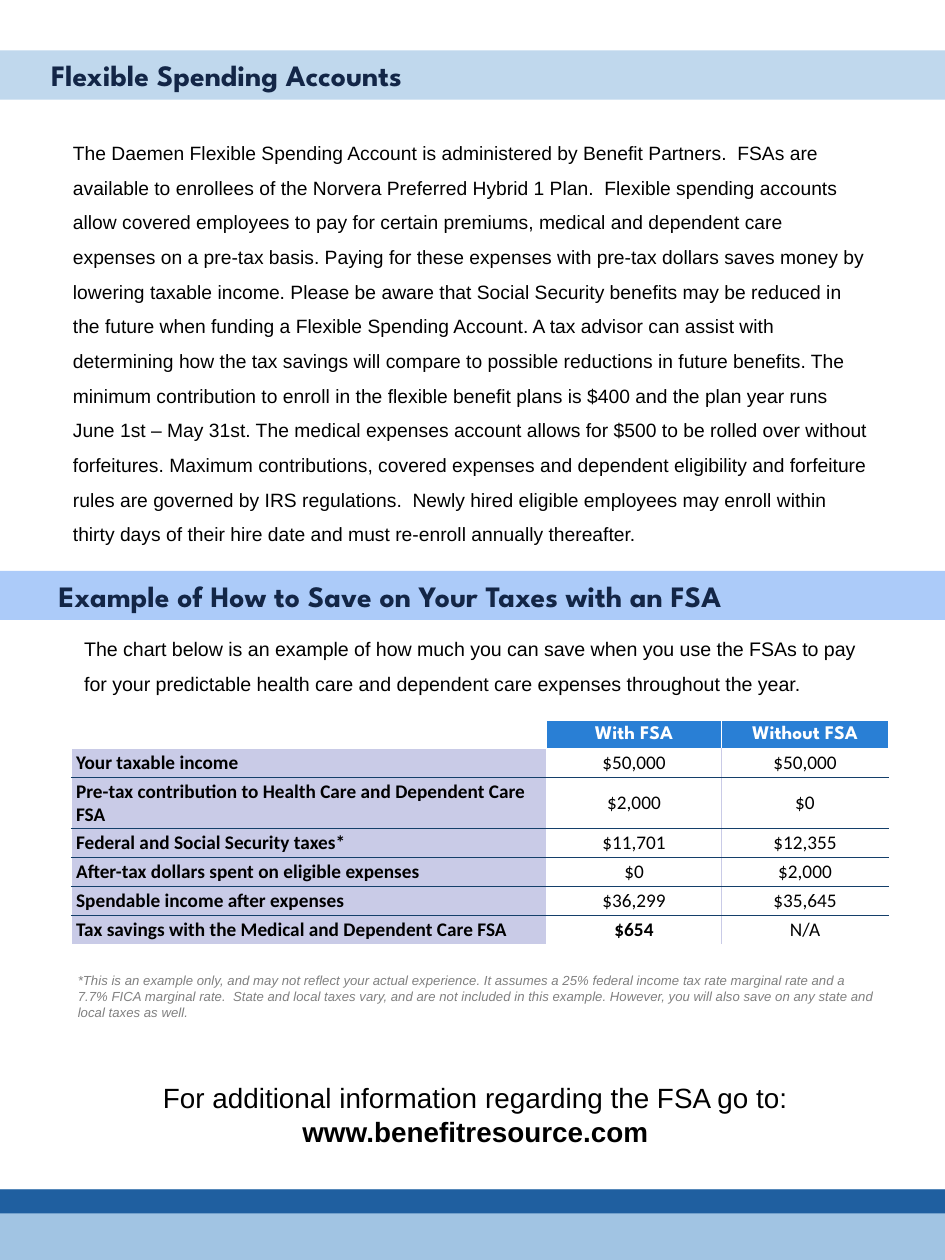
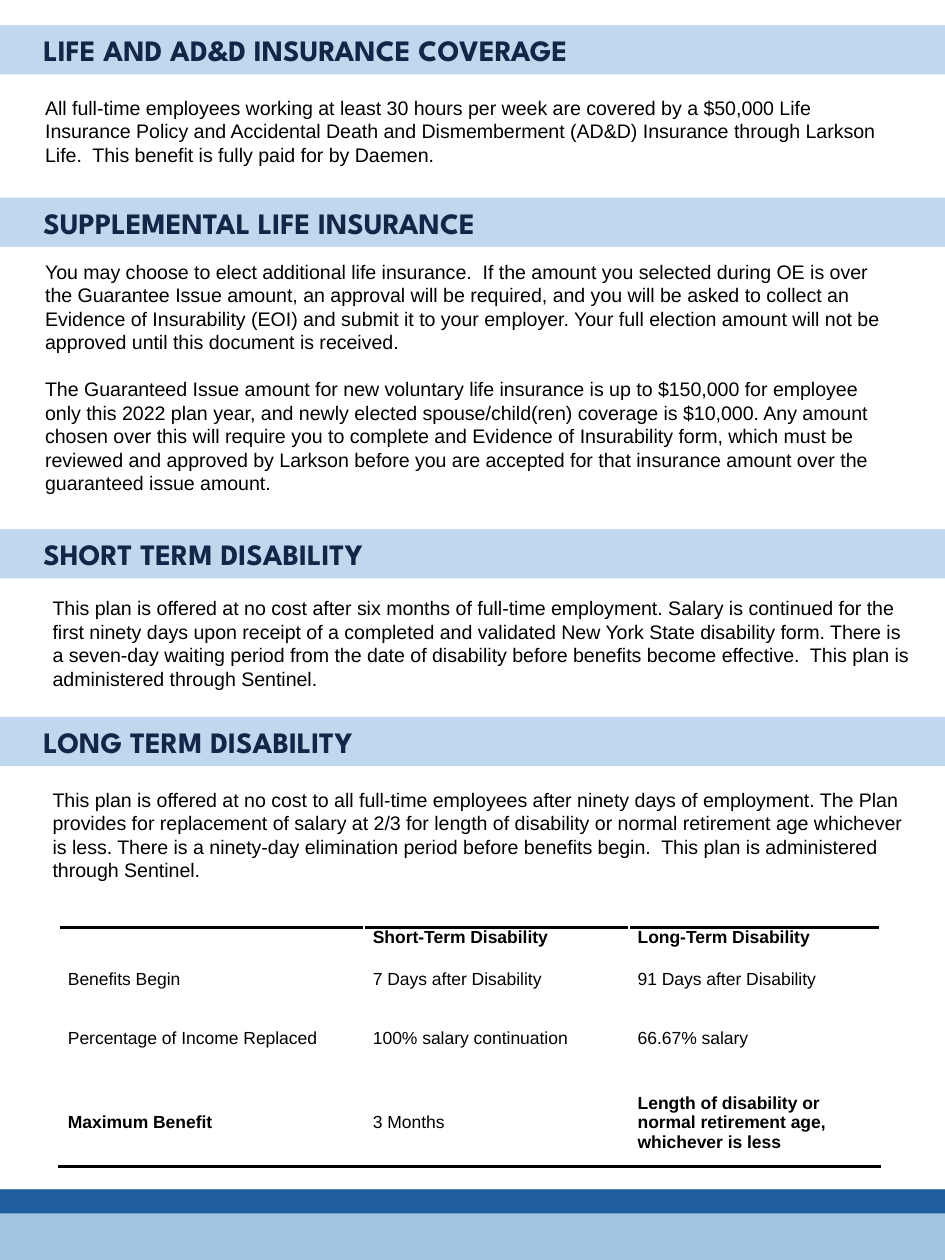
from lxml.etree import SubElement
from pptx import Presentation
from pptx.dml.color import RGBColor
from pptx.enum.shapes import MSO_SHAPE
from pptx.enum.text import MSO_ANCHOR, MSO_AUTO_SIZE, PP_ALIGN
from pptx.oxml.ns import qn
from pptx.util import Pt

PAGE_WIDTH, PAGE_HEIGHT = 540, 720
BAND_HEIGHT = 28.08
BODY_FONT, TITLE_FONT, LABEL_FONT = "Arial", "League Spartan", "Calibri"
BODY_SIZE = 11.2
COLORS = {
    "band": "C0D8ED", "example_band": "ACCBF9", "title": "132647",
    "footer": "A1C4E3", "footer_stripe": "1F5FA0",
    "text": "000000", "note": "808080", "white": "FFFFFF",
    "header": "297FD5", "label": "C9CBE7", "rule": "143F6A",
}


def color(name):
    return RGBColor.from_string(COLORS[name])


def style_paragraph(paragraph, font=BODY_FONT, size=BODY_SIZE, ink="text", bold=False,
                    italic=False, align=PP_ALIGN.LEFT):
    paragraph.alignment = align
    paragraph.font.name = font
    paragraph.font.size = Pt(size)
    paragraph.font.bold = bold
    paragraph.font.italic = italic
    paragraph.font.color.rgb = color(ink)


def add_rectangle(slide, left, top, width, height, fill):
    shape = slide.shapes.add_shape(MSO_SHAPE.RECTANGLE, Pt(left), Pt(top), Pt(width), Pt(height))
    shape.shadow.inherit = False
    shape.fill.solid()
    shape.fill.fore_color.rgb = color(fill)
    shape.line.fill.background()
    return shape


def add_footer(slide, top=679.68):
    add_rectangle(slide, 0, top, PAGE_WIDTH, PAGE_HEIGHT - top, "footer")
    add_rectangle(slide, 0, top, PAGE_WIDTH, 13.68, "footer_stripe")


def add_band(slide, top, title, indent=24.8, fill="band"):
    """Full-width title band."""
    shape = add_rectangle(slide, 0, top, PAGE_WIDTH, BAND_HEIGHT, fill)
    frame = shape.text_frame
    frame.margin_left = Pt(indent)
    frame.word_wrap = True
    frame.text = title
    style_paragraph(frame.paragraphs[0], TITLE_FONT, 16.9, "title", bold=True)


def add_text(slide, box, texts, line_spacing=None, gap=0, anchor=MSO_ANCHOR.TOP, **style):
    """Text box with one paragraph per text, gap points apart."""
    frame = slide.shapes.add_textbox(*map(Pt, box)).text_frame
    frame.word_wrap = True
    frame.auto_size = MSO_AUTO_SIZE.SHAPE_TO_FIT_TEXT
    frame.vertical_anchor = anchor
    for index, text in enumerate(texts):
        paragraph = frame.add_paragraph() if index else frame.paragraphs[0]
        paragraph.text = text
        style_paragraph(paragraph, **style)
        if line_spacing:
            paragraph.line_spacing = line_spacing
        if index:
            paragraph.space_before = Pt(gap)
    return frame


def add_table(slide, left, top, column_widths, row_heights):
    """Plain table without banding."""
    table = slide.shapes.add_table(
        len(row_heights), len(column_widths), Pt(left), Pt(top),
        Pt(sum(column_widths)), Pt(sum(row_heights))).table
    table.first_row = table.horz_banding = False
    for column, width in zip(table.columns, column_widths):
        column.width = Pt(width)
    for row, height in zip(table.rows, row_heights):
        row.height = Pt(height)
    return table


def fill_cell(cell, text, margins, borders, fill=None, anchor=MSO_ANCHOR.MIDDLE, **style):
    """Borders map a side (L, R, T, B) to a colour name and a width."""
    cell.margin_left = cell.margin_right = Pt(margins[0])
    cell.margin_top = cell.margin_bottom = Pt(margins[1])
    cell.vertical_anchor = anchor
    properties = cell._tc.get_or_add_tcPr()
    for side in "LRTB":
        if side in borders:
            ink, width = borders[side]
            line = SubElement(properties, qn(f"a:ln{side}"), w=str(Pt(width)))
            solid = SubElement(line, qn("a:solidFill"))
            SubElement(solid, qn("a:srgbClr"), val=COLORS[ink])
    if fill:
        cell.fill.solid()
        cell.fill.fore_color.rgb = color(fill)
    else:
        cell.fill.background()
    paragraph = cell.text_frame.paragraphs[0]
    if text:
        paragraph.text = text
    style_paragraph(paragraph, **style)
    if not text:
        SubElement(paragraph._p, qn("a:endParaRPr"), sz=str(int(style["size"] * 100)))
    return paragraph


def add_savings_table(slide, left, top):
    rows = [
        ("", "With FSA", "Without FSA"),
        ("Your taxable income", "$50,000", "$50,000"),
        ("Pre-tax contribution to Health Care and Dependent Care FSA", "$2,000", "$0"),
        ("Federal and Social Security taxes*", "$11,701", "$12,355"),
        ("After-tax dollars spent on eligible expenses", "$0", "$2,000"),
        ("Spendable income after expenses", "$36,299", "$35,645"),
        ("Tax savings with the Medical and Dependent Care FSA", "$654", "N/A"),
    ]
    heights = [15.8, 16.6, 29.2] + [16.6] * 4
    table = add_table(slide, left, top, [271.4, 99.9, 95.5], heights)
    last = len(rows) - 1
    white, rule, divider = ("white", 1), ("rule", 1), ("label", 1)
    for row, texts in enumerate(rows):
        for column, text in enumerate(texts):
            header, label = row == 0, column == 0
            if header:
                borders = {"L": white, "T": white, "R": white}
                fill = None if label else "header"
            else:
                borders = {"R": white} if label else {"L": white if column == 1 else divider}
                if column == 1:
                    borders["R"] = divider
                if row > 1:
                    borders["T"] = rule
                if row < last:
                    borders["B"] = rule
                fill = "label" if label else None
            fill_cell(
                table.cell(row, column), text, (2.5, 1.3), borders, fill, size=11,
                font=TITLE_FONT if header else LABEL_FONT,
                ink="white" if header else "text",
                bold=header or label or text == "$654",
                align=PP_ALIGN.LEFT if label else PP_ALIGN.CENTER)


def add_disability_table(slide, left, top):
    rows = [
        ("", "Short-Term Disability", "Long-Term Disability"),
        ("Benefits Begin", "7 Days after Disability", "91 Days after Disability"),
        ("Percentage of Income Replaced", "100% salary continuation", "66.67% salary"),
        ("Maximum Benefit", "3 Months",
         "Length of disability or normal retirement age, whichever is less"),
    ]
    table = add_table(slide, left, top, [174.3, 151.3, 143.5], [19.4, 20.9, 46.1, 50.4])
    last = len(rows) - 1
    edges = {0: {"T": ("text", 2)}, last: {"B": ("text", 2)}}
    for row, texts in enumerate(rows):
        for column, text in enumerate(texts):
            paragraph = fill_cell(
                table.cell(row, column), text, (5.04, 0), edges.get(row, {}), "white",
                MSO_ANCHOR.MIDDLE if row else MSO_ANCHOR.TOP, size=10,
                bold=row == 0 or (row == last and column != 1))
            if row == 0:
                paragraph.space_after = Pt(6)


def build_spending_accounts(slide):
    add_footer(slide)

    # Account description
    add_band(slide, 28.8, "Flexible Spending Accounts", 29.2)
    description = [
        "The Daemen Flexible Spending Account is administered by Benefit Partners.  FSAs are "
        "available to enrollees of the Norvera Preferred Hybrid 1 Plan.  Flexible spending "
        "accounts allow covered employees to pay for certain premiums, medical and dependent "
        "care expenses on a pre-tax basis. Paying for these expenses with pre-tax dollars saves "
        "money by lowering taxable income.",
        "Please be aware that Social Security benefits may be "
        "reduced in the future when funding a Flexible Spending Account. A tax advisor can "
        "assist with determining how the tax savings will compare to possible reductions in "
        "future benefits.",
        "The minimum contribution to enroll in the flexible benefit plans is "
        "$400 and the plan year runs June 1st – May 31st. The medical expenses account allows "
        "for $500 to be rolled over without forfeitures. Maximum contributions, covered "
        "expenses and dependent eligibility and forfeiture rules are governed by IRS "
        "regulations.  Newly hired eligible employees may enroll within thirty days of their "
        "hire date and must re-enroll annually thereafter.",
    ]
    add_text(slide, (34.6, 70.6, 470.2, 249.8), [" ".join(description)],
             line_spacing=1.5, size=11)

    # Savings example
    add_band(slide, 326.2, "Example of How to Save on Your Taxes with an FSA", 33.5,
             "example_band")
    add_text(slide, (41, 353.5, 461.5, 46.1), [
        "The chart below is an example of how much you can save when you use the FSAs to pay "
        "for your predictable health care and dependent care expenses throughout the year."],
        line_spacing=1.5)
    add_savings_table(slide, 41, 411.8)
    add_text(slide, (37.4, 552.2, 470.2, 34.6), [
        "*This is an example only, and may not reflect your actual experience. It assumes a 25% "
        "federal income tax rate marginal rate and a 7.7% FICA marginal rate.  State and local "
        "taxes vary, and are not included in this example. However, you will also save on any "
        "state and local taxes as well."], size=7.5, ink="note", italic=True)

    # Where to learn more
    frame = add_text(slide, (36.7, 614.2, 470.2, 65.5), [
        "For additional information regarding the FSA go to:",
        "www.benefitresource.com"], size=15.9, align=PP_ALIGN.CENTER)
    frame.paragraphs[1].font.bold = True


def build_insurance(slide):
    add_footer(slide)

    # Life insurance
    add_band(slide, 14.4, "LIFE AND AD&D INSURANCE COVERAGE")
    add_text(slide, (18.7, 51.1, 501.8, 48.2), [
        "All full-time employees working at least 30 hours per week are covered by a $50,000 "
        "Life Insurance Policy and Accidental Death and Dismemberment (AD&D) Insurance through "
        "Larkson Life.  This benefit is fully paid for by Daemen."])
    add_band(slide, 113, "SUPPLEMENTAL LIFE INSURANCE")
    add_text(slide, (18.7, 144.7, 501.8, 143.3), [
        "You may choose to elect additional life insurance.  If the amount you selected during "
        "OE is over the Guarantee Issue amount, an approval will be required, and you will be "
        "asked to collect an Evidence of Insurability (EOI) and submit it to your employer. "
        "Your full election amount will not be approved until this document is received.",
        "The Guaranteed Issue amount for new voluntary life insurance is up to $150,000 for "
        "employee only this 2022 plan year, and newly elected spouse/child(ren) coverage is "
        "$10,000. Any amount chosen over this will require you to complete and Evidence of "
        "Insurability form, which must be reviewed and approved by Larkson before you are "
        "accepted for that insurance amount over the guaranteed issue amount."], gap=13.4)

    # Disability plans
    plans = [
        (302.4, "SHORT TERM DISABILITY", 337,
         "This plan is offered at no cost after six months of full-time employment. Salary is "
         "continued for the first ninety days upon receipt of a completed and validated New "
         "York State disability form. There is a seven-day waiting period from the date of "
         "disability before benefits become effective.  This plan is administered through "
         "Sentinel."),
        (409.7, "LONG TERM DISABILITY", 446.4,
         "This plan is offered at no cost to all full-time employees after ninety days of "
         "employment. The Plan provides for replacement of salary at 2/3 for length of "
         "disability or normal retirement age whichever is less. There is a ninety-day "
         "elimination period before benefits begin.  This plan is administered through "
         "Sentinel."),
    ]
    for band_top, title, text_top, text in plans:
        add_band(slide, band_top, title)
        add_text(slide, (23, text_top, 506.9, 61.2), [text], anchor=MSO_ANCHOR.MIDDLE)
    add_disability_table(slide, 33.8, 529.9)


def main():
    presentation = Presentation()
    presentation.slide_width, presentation.slide_height = Pt(PAGE_WIDTH), Pt(PAGE_HEIGHT)
    blank = presentation.slide_layouts[6]
    for build in (build_spending_accounts, build_insurance):
        build(presentation.slides.add_slide(blank))
    presentation.save("out.pptx")


if __name__ == "__main__":
    main()
